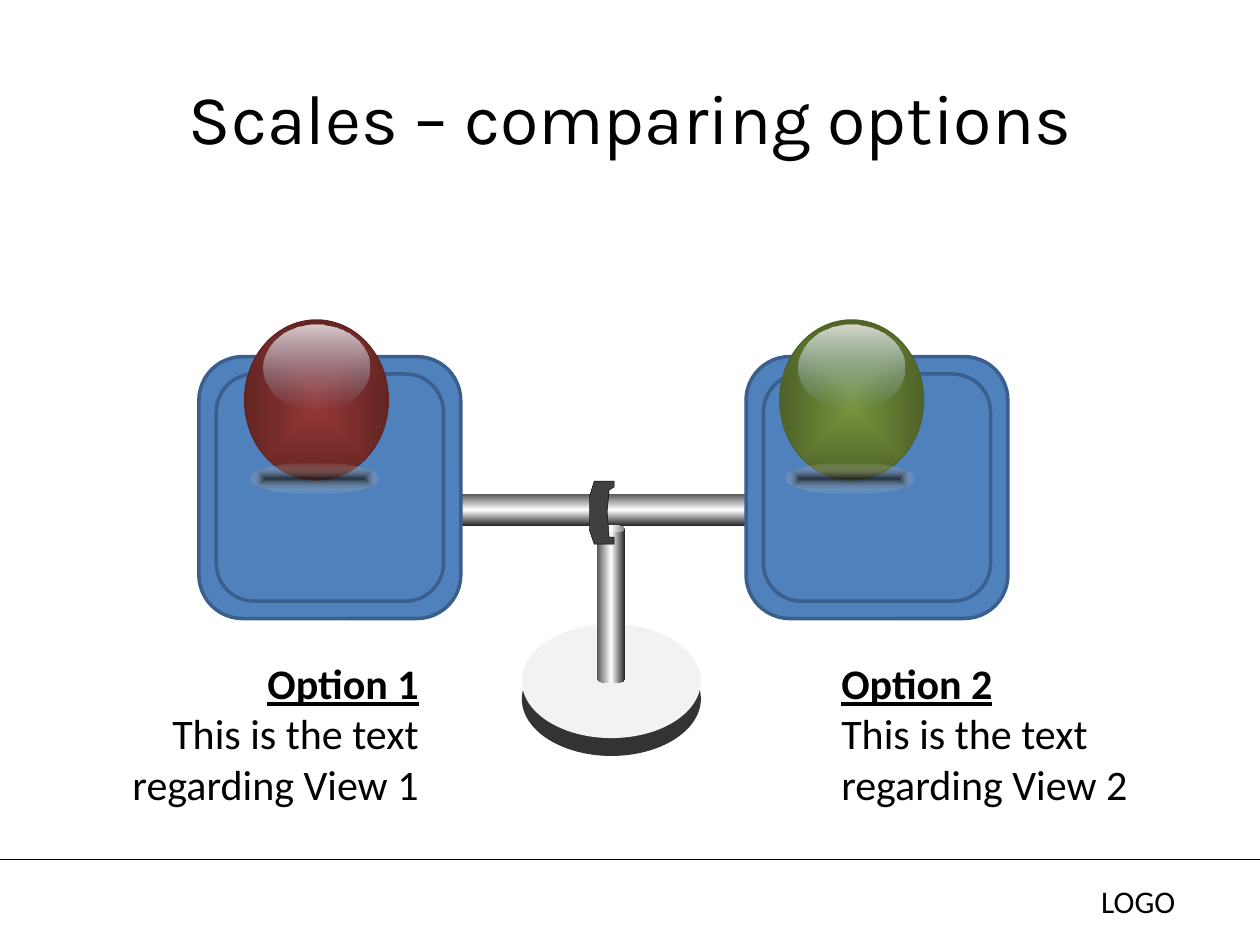
from dataclasses import dataclass
from typing import NamedTuple, Optional

from lxml.etree import SubElement
from pptx import Presentation
from pptx.dml.color import RGBColor
from pptx.enum.shapes import MSO_CONNECTOR as Connector, MSO_SHAPE as Preset
from pptx.enum.text import MSO_ANCHOR as Anchor, PP_ALIGN as Align
from pptx.oxml import parse_xml
from pptx.oxml.ns import nsdecls, qn
from pptx.util import Cm, Pt


class Stop(NamedTuple):
    position: int
    color: str
    opacity: int = 100


class Box(NamedTuple):
    left: float
    top: float
    width: float
    height: float

    def lengths(self) -> tuple:
        return tuple(Cm(value) for value in self)


class Gradient(NamedTuple):
    stops: tuple
    angle: Optional[int] = None


@dataclass(frozen=True)
class Theme:
    text: str = "000000"
    panel: str = "4F81BD"
    panel_line: str = "3A5F8C"
    base_side: str = "333333"
    base_top: str = "F2F2F2"
    ring: str = "404040"
    metal: Gradient = Gradient(
        (Stop(0, "595959"), Stop(50, "FFFFFF"), Stop(100, "262626")), 0)
    gloss: Gradient = Gradient(
        (Stop(0, "FFFFFF", 77), Stop(100, "8EB4E3", 0)), 90)
    ball_shadow: Gradient = Gradient(
        (Stop(0, "171717", 76), Stop(100, "FFFFFF", 0)))
    title_font: str = "Karla"
    body_font: str = "Calibri"
    title_size: int = 40
    body_size: int = 24
    logo_size: int = 18


@dataclass(frozen=True)
class Option:
    heading: str
    detail: str
    align: Align
    text_left: float
    panel_left: float
    ball_left: float
    ball_center: str
    ball_edge: str


THEME = Theme()
OPTIONS = (
    Option("Option 1", "This is the text regarding View 1", Align.RIGHT,
           1.7, 4.01, 4.93, "953735", "632523"),
    Option("Option 2", "This is the text regarding View 2", Align.LEFT,
           16.71, 15.04, 15.72, "77933C", "4F6228"),
)
RING = ((11.98, 9.7), (12.38, 9.7), (12.38, 9.82), (12.28, 9.88),
        (12.24, 10.32), (12.28, 10.83), (12.38, 10.83), (12.38, 10.97),
        (11.98, 10.97), (11.88, 10.68), (11.88, 10.02))


def write(para, text: str, *, size: int, font: str = THEME.body_font,
          align: Align = Align.LEFT, bold: bool = False,
          underline: bool = False) -> None:
    para.alignment = align
    span = para.add_run()
    span.text = text
    span.font.name = font
    span.font.size = Pt(size)
    span.font.bold = bold
    span.font.underline = underline
    span.font.color.rgb = RGBColor.from_string(THEME.text)


def add_text_frame(page, box: Box):
    frame = page.shapes.add_textbox(*box.lengths()).text_frame
    frame.word_wrap = True
    return frame


def fill_gradient(shape, gradient: Gradient) -> None:
    shape.fill.background()
    element = parse_xml(f'<a:gradFill {nsdecls("a")} rotWithShape="1"/>')
    stops = SubElement(element, qn("a:gsLst"))
    for stop in gradient.stops:
        mark = SubElement(stops, qn("a:gs"), pos=str(stop.position * 1000))
        color = SubElement(mark, qn("a:srgbClr"), val=stop.color)
        if stop.opacity < 100:
            SubElement(color, qn("a:alpha"), val=str(stop.opacity * 1000))
    if gradient.angle is None:
        route = SubElement(element, qn("a:path"), path="shape")
        SubElement(route, qn("a:fillToRect"),
                   {side: "50000" for side in "ltrb"})
    else:
        SubElement(element, qn("a:lin"), ang=str(gradient.angle * 60000),
                   scaled="0")
    properties = shape.element.spPr
    properties.replace(properties.find(qn("a:noFill")), element)


def style(shape, fill, line: Optional[str] = None, width: float = 0.75) -> None:
    shape.shadow.inherit = False
    if line:
        shape.line.color.rgb = RGBColor.from_string(line)
        shape.line.width = Pt(width)
    else:
        shape.line.fill.background()
    if isinstance(fill, Gradient):
        fill_gradient(shape, fill)
    else:
        shape.fill.solid()
        shape.fill.fore_color.rgb = RGBColor.from_string(fill)


def add_shape(parent, preset: Preset, box: Box, fill,
              line: Optional[str] = None, width: float = 0.75,
              rotation: float = 0):
    shape = parent.shapes.add_shape(preset, *box.lengths())
    shape.rotation = rotation
    style(shape, fill, line, width)
    return shape


def add_panel(parent, left: float) -> None:
    for inset in (0, 0.35):
        side = 5.28 - 2 * inset
        add_shape(parent, Preset.ROUNDED_RECTANGLE,
                  Box(left + inset, 7.19 + inset, side, side),
                  THEME.panel, THEME.panel_line, 2)


def add_stand(page) -> None:
    stand = page.shapes.add_group_shape()
    for top, color in ((12.94, THEME.base_side), (12.58, THEME.base_top)):
        add_shape(stand, Preset.OVAL, Box(10.52, top, 3.61, 2.3), color)
    add_shape(stand, Preset.CAN, Box(12.04, 10.59, 0.56, 3.18), THEME.metal)
    points = [(Cm(x), Cm(y)) for x, y in RING]
    builder = stand.shapes.build_freeform(*points[0])
    builder.add_line_segments(points[1:], close=True)
    style(builder.convert_to_shape(), THEME.ring, THEME.text, 0.25)


def add_ball(page, option: Option) -> None:
    ball = page.shapes.add_group_shape()
    left, top = option.ball_left, 6.45
    body = Gradient((Stop(0, option.ball_center), Stop(100, option.ball_edge)))
    add_shape(ball, Preset.OVAL, Box(left, top, 2.9, 3.23), body,
              option.ball_edge)
    add_shape(ball, Preset.OVAL, Box(left + 0.38, top + 0.1, 2.13, 1.73),
              THEME.gloss)
    add_shape(ball, Preset.OVAL, Box(left + 0.1, top + 2.87, 2.62, 0.64),
              THEME.ball_shadow)


def add_option_text(page, option: Option) -> None:
    frame = add_text_frame(page, Box(option.text_left, 13.13, 6.99, 3.33))
    write(frame.paragraphs[0], option.heading, size=THEME.body_size,
          align=option.align, bold=True, underline=True)
    write(frame.add_paragraph(), option.detail, size=THEME.body_size,
          align=option.align)


def add_footer(page) -> None:
    rule = page.shapes.add_connector(Connector.STRAIGHT, Cm(0), Cm(17.32),
                                     Cm(25.4), Cm(17.32))
    rule.line.color.rgb = RGBColor.from_string(THEME.text)
    rule.line.width = Pt(0.75)
    SubElement(rule.element.spPr, qn("a:effectLst"))
    frame = add_text_frame(page, Box(21.95, 17.65, 2.82, 1.02))
    write(frame.paragraphs[0], "LOGO", size=THEME.logo_size)


def add_title(page, text: str) -> None:
    title = page.shapes.title
    title.left, title.top, title.width, title.height = Box(
        1.27, 0.76, 22.86, 3.18).lengths()
    title.text_frame.vertical_anchor = Anchor.MIDDLE
    write(title.text_frame.paragraphs[0], text, size=THEME.title_size,
          font=THEME.title_font, align=Align.CENTER)


def main() -> None:
    deck = Presentation()
    deck.slide_width, deck.slide_height = Cm(25.4), Cm(19.05)
    page = deck.slides.add_slide(deck.slide_layouts[5])
    add_footer(page)
    add_title(page, "Scales – comparing options")
    for option in OPTIONS:
        add_option_text(page, option)
    beam = page.shapes.add_group_shape()
    add_shape(beam, Preset.CAN, Box(12.27, 3.61, 0.64, 13.34), THEME.metal,
              rotation=90)
    for option in OPTIONS:
        add_panel(beam, option.panel_left)
    add_stand(page)
    for option in reversed(OPTIONS):
        add_ball(page, option)
    deck.save("out.pptx")


if __name__ == "__main__":
    main()
